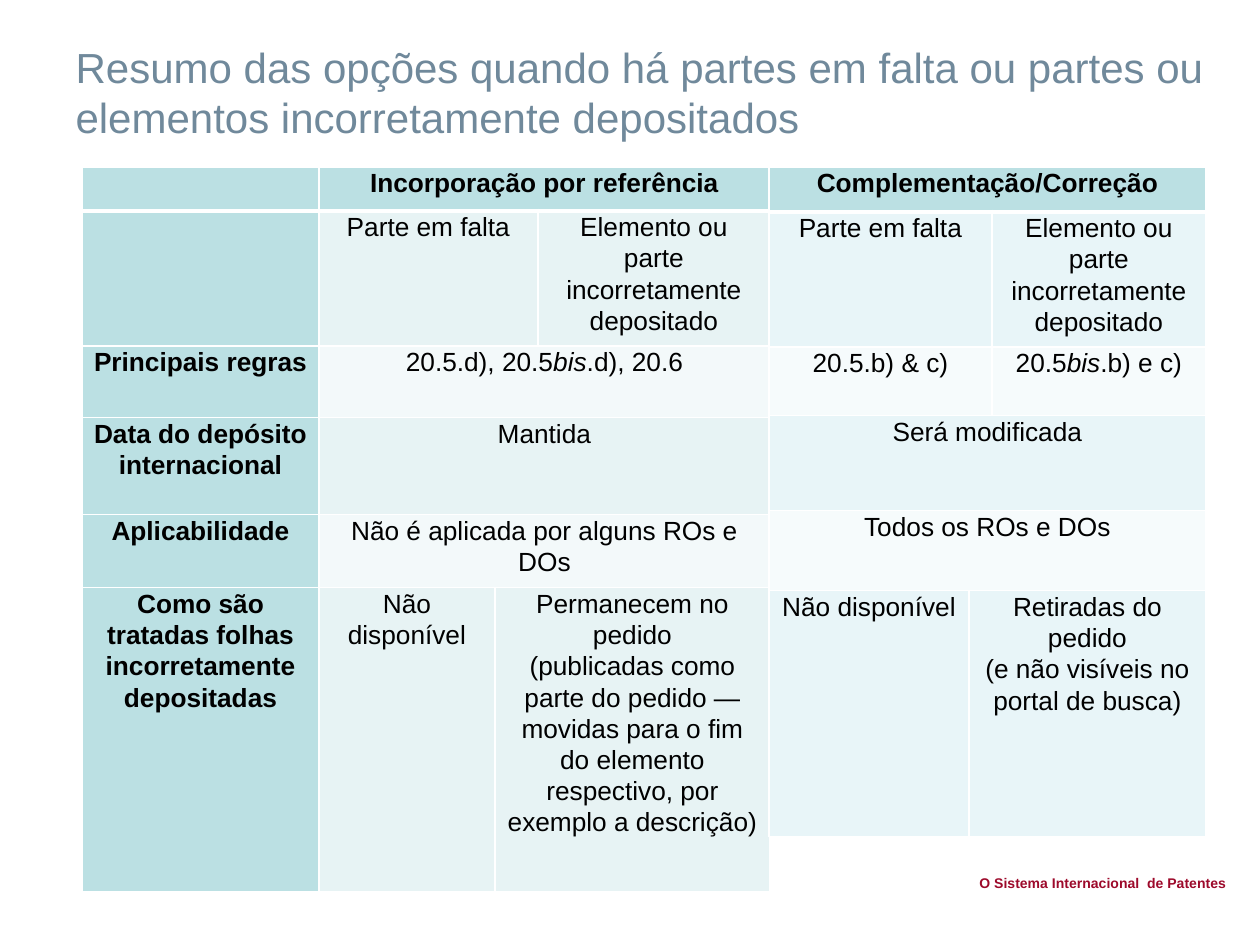
from dataclasses import dataclass

from lxml import etree
from pptx import Presentation
from pptx.dml.color import RGBColor
from pptx.enum.text import MSO_ANCHOR, PP_ALIGN
from pptx.oxml.ns import qn
from pptx.util import Emu, Pt

CENTER, LEFT = PP_ALIGN.CENTER, PP_ALIGN.LEFT
MIDDLE = MSO_ANCHOR.MIDDLE
SCALE = 914400 / 126  # EMU per px


@dataclass(frozen=True)
class Theme:
    font: str = "Arial"
    title: str = "70899B"
    foot: str = "9D0A2B"
    ink: str = "000000"
    head: str = "BBE0E3"
    rule: str = "FFFFFF"
    teal: tuple = ("F3F9FA", "E7F3F4")  # even and odd rows
    blue: tuple = ("F6FBFC", "E8F5F8")
    title_size: int = 24
    cell_size: int = 15
    foot_size: int = 8


THEME = Theme()
SPLIT = "Elemento ou parte incorretamente depositado"

# Each cell is (text, columns spanned); *...* marks italics
REFER = [
    [("", 1), ("Incorporação por referência", 3)],
    [("", 1), ("Parte em falta", 2), (SPLIT, 1)],
    [("Principais regras", 1), ("20.5.d), 20.5*bis*.d), 20.6", 3)],
    [("Data do depósito internacional", 1), ("Mantida", 3)],
    [("Aplicabilidade", 1), ("Não é aplicada por alguns ROs e DOs", 3)],
    [("Como são tratadas folhas incorretamente depositadas", 1),
     ("Não disponível", 1),
     ("Permanecem no pedido\n(publicadas como parte do pedido — movidas para "
      "o fim do elemento respectivo, por exemplo a descrição)", 2)],
]
CORRECT = [
    [("Complementação/Correção", 3)],
    [("Parte em falta", 2), (SPLIT, 1)],
    [("20.5.b) & c)", 2), ("20.5*bis*.b) e c)", 1)],
    [("Será modificada", 3)],
    [("Todos os ROs e DOs", 3)],
    [("Não disponível", 1),
     ("Retiradas do pedido\n(e não visíveis no portal de busca)", 2)],
]


def px(n):
    return Emu(round(n * SCALE))


def add_run(para, text, size, color, bold=False, italic=False):
    run = para.add_run()
    run.text = text
    font = run.font
    font.name, font.size = THEME.font, Pt(size)
    font.bold, font.italic = bold, italic
    font.color.rgb = RGBColor.from_string(color)


def add_edges(cell, low, top):
    """Draw the four cell borders, with widths in points."""
    props = cell._tc.get_or_add_tcPr()
    edges = (("a:lnL", 1), ("a:lnR", 1), ("a:lnT", top), ("a:lnB", low))
    for spot, (tag, width) in enumerate(edges):
        line = etree.Element(qn(tag), w=str(Pt(width)))
        fill = etree.SubElement(line, qn("a:solidFill"))
        etree.SubElement(fill, qn("a:srgbClr"), val=THEME.rule)
        props.insert(spot, line)


def fill_cell(cell, text, color, bold):
    cell.margin_left = cell.margin_right = px(9)
    cell.fill.solid()
    cell.fill.fore_color.rgb = RGBColor.from_string(color)
    frame = cell.text_frame
    for n, part in enumerate(text.split("\n")):
        para = frame.add_paragraph() if n else frame.paragraphs[0]
        para.alignment, para.line_spacing = CENTER, 1.07
        for k, piece in enumerate(part.split("*")):
            if piece:
                add_run(para, piece, THEME.cell_size, THEME.ink, bold, k % 2 == 1)


def add_grid(slide, left, top, cols, rows, data, tints, side):
    """Build a table; side tells whether the first column is a header."""
    grid = slide.shapes.add_table(len(rows), len(cols), px(left), px(top),
                                  px(sum(cols)), px(sum(rows))).table
    for col, width in zip(grid.columns, cols):
        col.width = px(width)
    for row, height in zip(grid.rows, rows):
        row.height = px(height)

    for r, cells in enumerate(data):
        for c in range(len(cols)):
            cell = grid.cell(r, c)
            cell.margin_top = cell.margin_bottom = 0
            add_edges(cell, 3 if r == 0 else 1, 3 if r == 1 else 1)
        c = 0
        for text, span in cells:
            cell = grid.cell(r, c)
            if span > 1:
                cell.merge(grid.cell(r, c + span - 1))
            head = r == 0 or (side and c == 0)
            fill_cell(cell, text, THEME.head if head else tints[r % 2], head)
            c += span


def add_title(slide, text):
    title = slide.shapes.title
    title.left, title.top = px(63), px(38)
    title.width, title.height = px(1172), px(107)
    frame = title.text_frame
    frame.vertical_anchor = MIDDLE
    para = frame.paragraphs[0]
    para.alignment = LEFT
    add_run(para, text, THEME.title_size, THEME.title)


def add_foot(slide, text):
    box = slide.shapes.add_textbox(px(967), px(868), px(272), px(42))
    frame = box.text_frame
    frame.word_wrap = False
    add_run(frame.paragraphs[0], text, THEME.foot_size, THEME.foot, True)


def main():
    deck = Presentation()
    deck.slide_width, deck.slide_height = px(1260), px(945)
    slide = deck.slides.add_slide(deck.slide_layouts[5])

    add_foot(slide, "O Sistema Internacional  de Patentes")
    add_title(slide, "Resumo das opções quando há partes em falta ou partes "
                     "ou elementos incorretamente depositados")

    # Two tables side by side
    add_grid(slide, 82, 167, (237, 176, 43, 232),
             (44, 131, 72, 97, 73, 304), REFER, THEME.teal, True)
    add_grid(slide, 769, 167, (200, 14, 214),
             (45, 128, 69, 95, 80, 246), CORRECT, THEME.blue, False)

    deck.save("out.pptx")


if __name__ == "__main__":
    main()
